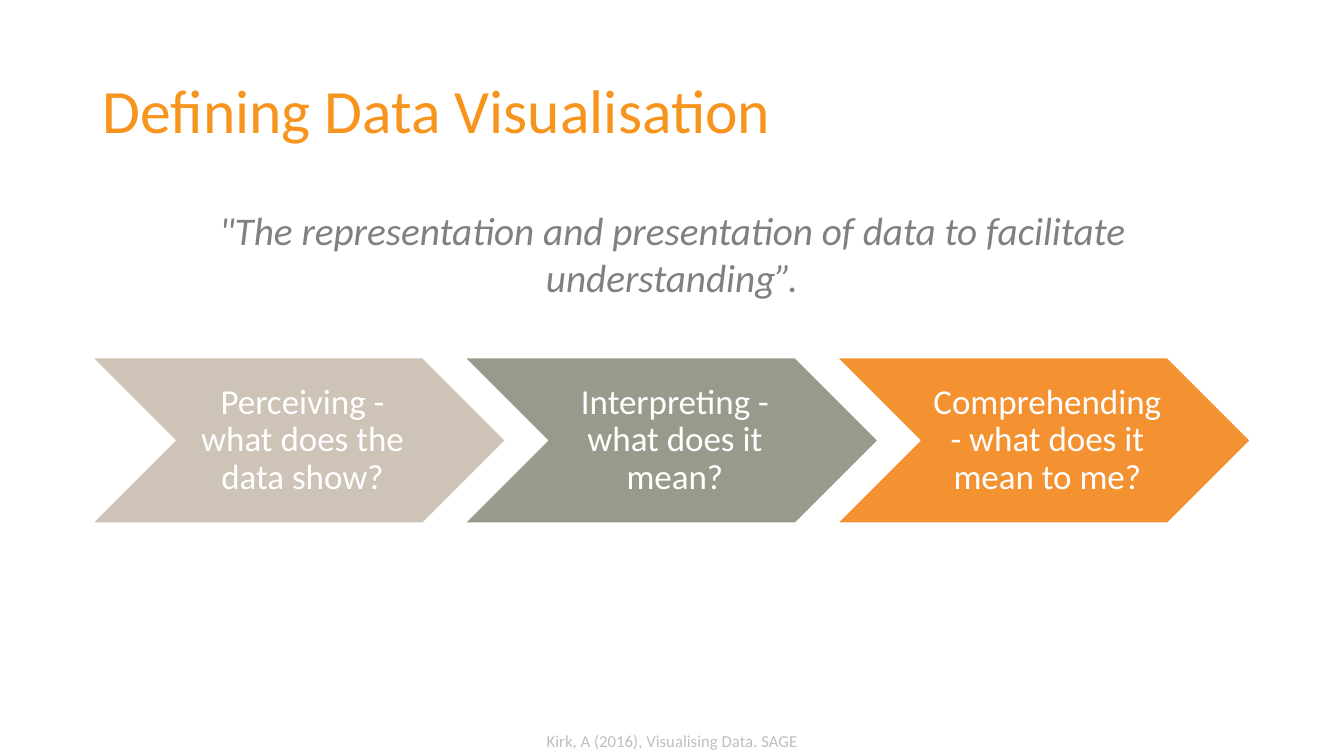
from pptx import Presentation
from pptx.dml.color import RGBColor
from pptx.enum.shapes import MSO_SHAPE
from pptx.enum.text import MSO_ANCHOR, MSO_AUTO_SIZE, PP_ALIGN
from pptx.util import Pt

ORANGE = RGBColor(0xF7, 0x94, 0x1D)
GREY = RGBColor(0x80, 0x80, 0x80)
LIGHT_GREY = RGBColor(0xBF, 0xBF, 0xBF)
WHITE = RGBColor(0xFF, 0xFF, 0xFF)
STAGES = [
    ("Perceiving - what does the data show?", RGBColor(0xCD, 0xC3, 0xB6)),
    ("Interpreting - what does it mean?", RGBColor(0x9A, 0x9A, 0x8C)),
    ("Comprehending - what does it mean to me?", RGBColor(0xF4, 0x91, 0x31)),
]
STAGE_LEFT, STAGE_TOP = 66, 255.6
STAGE_WIDTH, STAGE_HEIGHT, STAGE_PITCH = 295.2, 118.1, 266


def write(sp, text, size, color, align=PP_ALIGN.CENTER, anchor=MSO_ANCHOR.MIDDLE,
          spacing=1.0, italic=False):
    tf = sp.text_frame
    tf.text = text
    tf.word_wrap = True
    tf.auto_size = MSO_AUTO_SIZE.NONE
    tf.vertical_anchor = anchor
    p = tf.paragraphs[0]
    p.alignment = align
    p.line_spacing = spacing
    font = p.runs[0].font
    font.name = "Calibri"
    font.size = Pt(size)
    font.italic = italic
    font.color.rgb = color


def add_title(s, text):
    sp = s.shapes.title
    sp.left, sp.top, sp.width, sp.height = Pt(66), Pt(28.8), Pt(828), Pt(104.4)
    write(sp, text, 44, ORANGE, align=PP_ALIGN.LEFT, spacing=0.9)


def add_text(s, left, top, width, height, text, size, color, **style):
    sp = s.shapes.add_textbox(Pt(left), Pt(top), Pt(width), Pt(height))
    write(sp, text, size, color, **style)


def add_stage(s, left, text, fill):
    sp = s.shapes.add_shape(MSO_SHAPE.CHEVRON, Pt(left), Pt(STAGE_TOP),
                            Pt(STAGE_WIDTH), Pt(STAGE_HEIGHT))
    sp.shadow.inherit = False
    sp.fill.solid()
    sp.fill.fore_color.rgb = fill
    sp.line.color.rgb = WHITE
    sp.line.width = Pt(1)
    write(sp, text, 25, WHITE, spacing=0.9)
    tf = sp.text_frame
    tf.margin_left = Pt(8)
    tf.margin_top = tf.margin_right = tf.margin_bottom = Pt(3)


def main():
    prs = Presentation()
    prs.slide_width, prs.slide_height = Pt(960), Pt(540)
    s = prs.slides.add_slide(prs.slide_layouts[5])
    add_title(s, "Defining Data Visualisation")
    add_text(s, 318.2, 514.8, 324, 28.8, "Kirk, A (2016), Visualising Data. SAGE",
             12, LIGHT_GREY)
    for i, (text, fill) in enumerate(STAGES):
        add_stage(s, STAGE_LEFT + i * STAGE_PITCH, text, fill)
    add_text(s, 96, 144, 768, 75,
             "\"The representation and presentation of data to facilitate understanding”.",
             28, GREY, anchor=MSO_ANCHOR.TOP, italic=True)
    prs.save("out.pptx")


if __name__ == "__main__":
    main()
